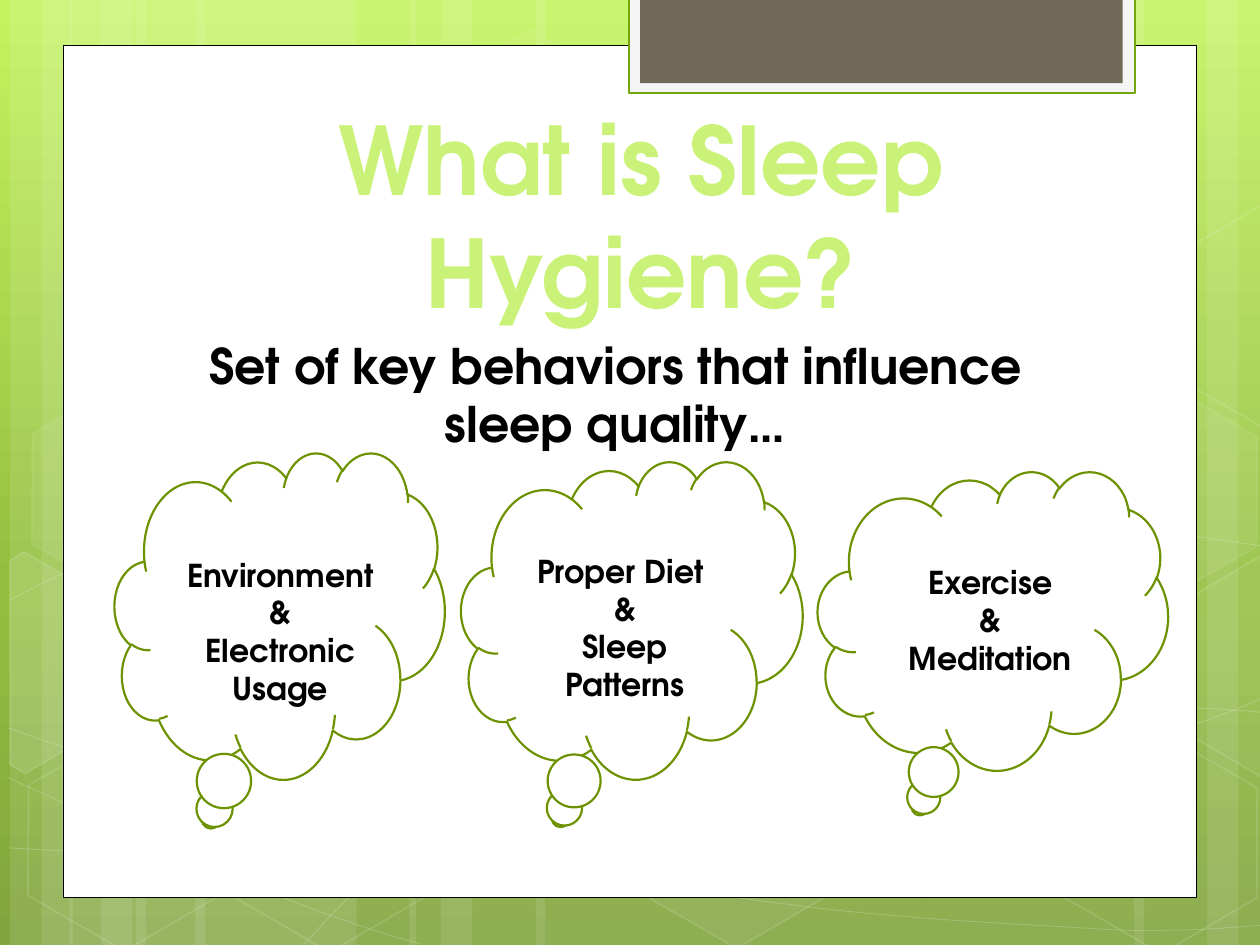
from copy import deepcopy
from dataclasses import dataclass

from lxml import etree
from pptx import Presentation
from pptx.dml.color import RGBColor
from pptx.enum import shapes, text
from pptx.oxml.ns import qn
from pptx.util import Inches, Pt


@dataclass(frozen=True)
class Theme:
    font: str = "TeX Gyre Adventor"
    white: str = "FFFFFF"
    black: str = "000000"
    title: str = "CAF278"
    cloud: str = "6D9200"
    tab_line: str = "74A510"
    tab_edge: str = "F5F5F5"
    tab: str = "71685A"
    backdrop: tuple = ((0, "C3F35F"), (62, "93BF3F"), (100, "81A53E"))
    title_size: int = 54
    body_size: int = 28
    label_size: int = 18


T = Theme()
RECT = shapes.MSO_SHAPE.RECTANGLE

# Backdrop curves: a start point, then groups of two control points and an end
CURVES = [
    [(0.07, 6.73), (0.61, 6.76), (1.15, 6.79), (1.9, 6.78), (2.65, 6.77), (3.58, 6.75), (4.58, 6.65),
     (5.58, 6.55), (7, 6.36), (7.92, 6.17), (8.83, 5.98), (9.77, 5.68), (10.07, 5.51)],
    [(0.07, 4.77), (0.36, 4.61), (0.65, 4.46), (1.21, 4.31), (1.78, 4.16), (2.59, 3.94), (3.47, 3.87),
     (4.36, 3.8), (5.44, 3.79), (6.54, 3.87), (7.64, 3.95), (9.47, 4.26), (10.07, 4.34)],
    [(0.06, 6.17), (1.27, 6.72), (2.47, 7.27), (3.34, 7.49)],
    [(0.07, 5.78), (0.38, 5.89), (0.7, 6), (1.28, 6.16), (1.86, 6.31), (2.73, 6.56), (3.57, 6.73),
     (4.4, 6.9), (5.45, 7.08), (6.28, 7.18), (7.11, 7.29), (8, 7.33), (8.53, 7.36),
     (9.05, 7.4), (9.19, 7.38), (9.45, 7.38), (9.71, 7.37), (9.89, 7.35), (10.07, 7.34)],
    [(2.42, 7.49), (2.6, 7.29), (2.78, 7.09), (3.02, 6.91), (3.26, 6.73), (3.6, 6.53), (3.88, 6.39),
     (4.16, 6.25), (4.33, 6.19), (4.7, 6.09), (5.06, 5.99), (5.73, 5.85), (6.08, 5.78),
     (6.44, 5.71), (6.49, 5.71), (6.8, 5.69), (7.11, 5.66), (7.6, 5.63), (7.94, 5.62),
     (8.29, 5.61), (8.86, 5.62), (8.86, 5.62), (9.08, 5.62), (9.31, 5.62), (9.53, 5.62),
     (9.71, 5.63), (9.88, 5.64), (9.97, 5.65), (10.06, 5.66), (10.03, 5.65), (10.06, 5.66)],
]
# Hexagons: left, top, fill opacity, line opacity
HEXAGONS = [(3.34, 0.36, 4, 8), (4.97, 5.89, 6, 12), (0.11, 5.91, 0, 12),
            (0.14, 3.12, 7, 8), (1.74, 5.92, 0, 12), (7.53, 4.53, 10, 12),
            (8.34, 5.93, 0, 12), (8.34, 3.14, 7, 8)]
# Hexagons cut by the slide edge: points, fill opacity
CUT_HEXAGONS = [
    ([(0.08, 4.45), (0.19, 4.38), (0.96, 4.82), (0.95, 5.7), (0.2, 6.14), (0.08, 6.07)], 10),
    ([(9.26, 4.85), (10.01, 4.41), (10.09, 4.46), (10.09, 6.13), (10.02, 6.17), (9.26, 5.73)], 4),
    ([(9.26, 2.07), (10.01, 1.63), (10.1, 1.68), (10.09, 3.35), (10.02, 3.39), (9.26, 2.95)], 0),
]
# Clouds: cloud box, label box, label paragraphs
CLOUDS = [
    ((0.91, 3.59, 2.62, 2.59), (1.29, 4.36, 1.87, 1.31), ["Environment &", "Electronic Usage"]),
    ((3.66, 3.66, 2.71, 2.52), (4.1, 4.33, 1.72, 1.31), ["Proper Diet ", "&", "Sleep Patterns"]),
    ((6.49, 3.74, 2.78, 2.37), (6.9, 4.42, 1.92, 1.01), ["Exercise", "&", "Meditation"]),
]


def paint(fmt, color, opacity=100):
    """Give a fill a solid colour, or none when the opacity is zero."""
    if not opacity:
        fmt.background()
        return
    fmt.solid()
    fmt.fore_color.rgb = RGBColor.from_string(color)
    if opacity < 100:
        clr = fmt._xPr.find(qn("a:solidFill"))[0]
        etree.SubElement(clr, qn("a:alpha")).set("val", str(opacity * 1000))


def style(sp, fill=T.white, opacity=100, line=None, width=1, line_opacity=100):
    sp.shadow.inherit = False
    paint(sp.fill, fill, opacity)
    paint(sp.line.fill, line or T.white, line_opacity if line else 0)
    if line:
        sp.line.width = Pt(width)
    return sp


def add_shape(s, kind, box, **fmt):
    return style(s.shapes.add_shape(kind, *map(Inches, box)), **fmt)


def add_outline(s, points, close, **fmt):
    pts = [(Inches(x), Inches(y)) for x, y in points]
    fb = s.shapes.build_freeform(*pts[0])
    fb.add_line_segments(pts[1:], close=close)
    return style(fb.convert_to_shape(), **fmt)


def add_curve(s, points, **fmt):
    """Draw an open outline, then join each three segments into a cubic curve."""
    sp = add_outline(s, points, False, opacity=0, **fmt)
    lines = list(sp.element.iter(qn("a:lnTo")))
    for first, second, third in zip(lines[::3], lines[1::3], lines[2::3]):
        bez = etree.Element(qn("a:cubicBezTo"))
        first.addprevious(bez)
        for ln in (first, second, third):
            bez.append(ln[0])
            ln.getparent().remove(ln)


def add_text(s, box, lines, size, color=T.black, anchor=text.MSO_ANCHOR.TOP, before=0, indent=0,
             fit=text.MSO_AUTO_SIZE.NONE):
    tf = s.shapes.add_textbox(*map(Inches, box)).text_frame
    tf.word_wrap = True
    tf.auto_size = fit
    tf.vertical_anchor = anchor
    for i, line in enumerate(lines):
        p = tf.paragraphs[0] if i == 0 else tf.add_paragraph()
        p.alignment = text.PP_ALIGN.CENTER
        p.space_before = Pt(before)
        if indent:
            p._p.get_or_add_pPr().set("marL", str(Inches(indent)))
        r = p.add_run()
        r.text = line
        r.font.name, r.font.size, r.font.bold = T.font, Pt(size), True
        r.font.color.rgb = RGBColor.from_string(color)


def add_backdrop(s, width, height):
    # Gradient
    fill = s.background.fill
    fill.gradient()
    fill.gradient_angle = 270
    stops = s.element.find(".//" + qn("a:gsLst"))
    stops.append(deepcopy(stops[0]))
    for stop, (pos, color) in zip(fill.gradient_stops, T.backdrop):
        stop.position = pos / 100
        stop.color.rgb = RGBColor.from_string(color)

    # Stripes: three bands a group, the third group mirrored from the right
    for x, wide, mirrored in ((0.08, 1.75, False), (0.55, 1.75, False),
                              (width + 0.08, 1.75, True), (3.25, 3.08, False)):
        for offset, w in ((1, wide), (0, 0.5), (0.25, 0.83)):
            left = x - offset - w if mirrored else x + offset
            add_shape(s, RECT, (left, 0, w, height), opacity=10)

    # Curves and hexagons
    for pts in CURVES:
        add_curve(s, pts, line=T.white, width=0.5, line_opacity=20)
    for x, y, opacity, line_opacity in HEXAGONS:
        sp = add_shape(s, shapes.MSO_SHAPE.HEXAGON, (x, y, 1.75, 1.52), opacity=opacity,
                       line=T.white, line_opacity=line_opacity)
        sp.adjustments[0] = 0.285
        sp.rotation = 30
    for pts, opacity in CUT_HEXAGONS:
        add_outline(s, pts, True, opacity=opacity, line=T.white, line_opacity=12)


def add_panel(s, x, y, w, h):
    add_shape(s, RECT, (x, y, w, h), line=T.black, width=0.5)
    # Tab hanging from the top edge
    add_shape(s, RECT, (x + 4.49, -0.02, 4.02, 0.76), fill=T.tab_edge, line=T.tab_line, width=1.25)
    add_shape(s, RECT, (x + 4.58, -0.02, 3.83, 0.68), fill=T.tab)


def add_cloud(s, box, label_box, lines):
    add_shape(s, shapes.MSO_SHAPE.CLOUD_CALLOUT, box, line=T.cloud, width=1.25)
    add_text(s, label_box, lines, T.label_size, fit=text.MSO_AUTO_SIZE.SHAPE_TO_FIT_TEXT)


def main():
    prs = Presentation()
    prs.slide_width, prs.slide_height = Inches(10), Inches(7.5)
    s = prs.slides.add_slide(prs.slide_layouts[6])
    add_backdrop(s, 10, 7.5)
    add_panel(s, 0.5, 0.36, 9, 6.76)

    # Title and definition
    add_text(s, (0.91, 1.4, 8.36, 1.25), ["What is Sleep Hygiene?"], T.title_size,
             color=T.title, anchor=text.MSO_ANCHOR.BOTTOM)
    add_text(s, (1.14, 2.61, 7.41, 3.84), ["Set of key behaviors that influence sleep quality…"],
             T.body_size, before=5.6, indent=0.08)

    # Key behaviors
    for cloud in CLOUDS:
        add_cloud(s, *cloud)
    prs.save("out.pptx")


if __name__ == "__main__":
    main()
